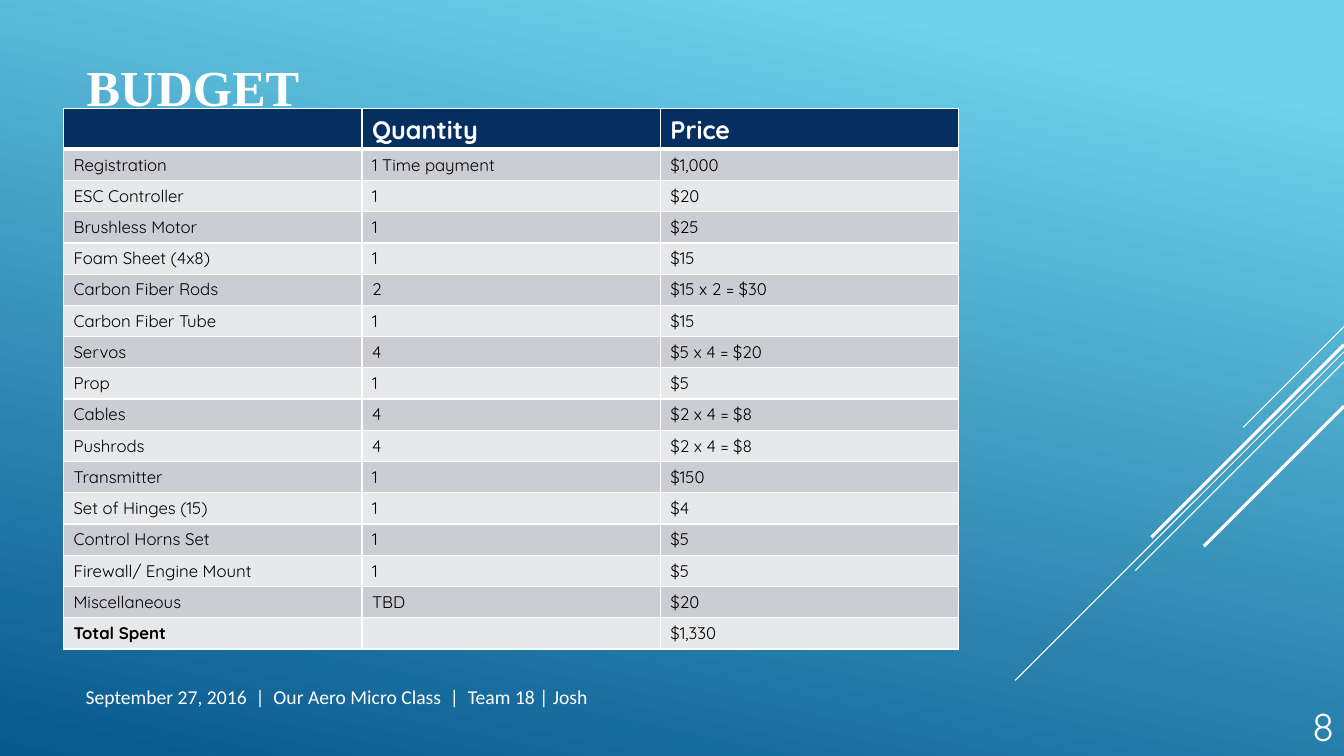
from lxml.etree import SubElement
from pptx import Presentation
from pptx.dml.color import RGBColor
from pptx.enum.shapes import MSO_CONNECTOR
from pptx.enum.text import MSO_ANCHOR, PP_ALIGN
from pptx.oxml.ns import qn
from pptx.util import Pt

PX = 9144
COLORS = {
    "sky": "6ED2EB",
    "ocean": "06588E",
    "white": "FFFFFF",
    "black": "000000",
    "header": "052F61",
    "band_dark": "CCCDD2",
    "band_light": "E7E8EA",
}


def add_run(paragraph, text, font, size, color, bold=False):
    run = paragraph.add_run()
    run.text = text
    run.font.name = font
    run.font.size = Pt(size)
    run.font.bold = bold
    run.font.color.rgb = RGBColor.from_string(COLORS[color])


def add_border(cell, side, width):
    line = SubElement(cell._tc.get_or_add_tcPr(), qn(f"a:ln{side}"), w=str(Pt(width)))
    fill = SubElement(line, qn("a:solidFill"))
    SubElement(fill, qn("a:srgbClr"), val=COLORS["white"])


presentation = Presentation()
presentation.slide_width = 1333 * PX
presentation.slide_height = 750 * PX
slide = presentation.slides.add_slide(presentation.slide_layouts[6])

background = slide.background.fill
background.gradient()
background.gradient_angle = 258
for stop, (position, color) in zip(background.gradient_stops, [(0.1, "sky"), (1, "ocean")]):
    stop.position = position
    stop.color.rgb = RGBColor.from_string(COLORS[color])

diagonals = [
    (324, 100, 0.75),
    (349, 326, 0.75),
    (359, 207, 0.75),
    (342, 191, 2.25),
    (403, 139, 2.25),
]
for top, run_length, width in diagonals:
    diagonal = slide.shapes.add_connector(
        MSO_CONNECTOR.STRAIGHT,
        1333 * PX, top * PX, (1333 - run_length) * PX, (top + run_length) * PX,
    )
    diagonal.line.color.rgb = RGBColor.from_string(COLORS["white"])
    diagonal.line.width = Pt(width)
    SubElement(diagonal._element.spPr, qn("a:effectLst"))

labels = [
    ("BUDGET", (76, 36, 841, 99), "Times New Roman", 36, True, MSO_ANCHOR.MIDDLE, PP_ALIGN.LEFT),
    ("September 27, 2016  |  Our Aero Micro Class  |  Team 18 | Josh",
     (75, 675, 825, 40), "Calibri", 14, False, MSO_ANCHOR.TOP, PP_ALIGN.LEFT),
    ("8", (1208, 675, 125, 73), "Quicksand", 28, False, MSO_ANCHOR.BOTTOM, PP_ALIGN.RIGHT),
]
for text, box, font, size, bold, anchor, alignment in labels:
    text_box = slide.shapes.add_textbox(*(length * PX for length in box))
    frame = text_box.text_frame
    frame.word_wrap = True
    frame.vertical_anchor = anchor
    paragraph = frame.paragraphs[0]
    paragraph.alignment = alignment
    add_run(paragraph, text, font, size, "white", bold)

budget = [
    ("", "Quantity", "Price"),
    ("Registration", "1 Time payment", "$1,000"),
    ("ESC Controller", "1", "$20"),
    ("Brushless Motor", "1", "$25"),
    ("Foam Sheet (4x8)", "1", "$15"),
    ("Carbon Fiber Rods", "2", "$15 x 2 = $30"),
    ("Carbon Fiber Tube", "1", "$15"),
    ("Servos", "4", "$5 x 4 = $20"),
    ("Prop", "1", "$5"),
    ("Cables", "4", "$2 x 4 = $8"),
    ("Pushrods", "4", "$2 x 4 = $8"),
    ("Transmitter", "1", "$150"),
    ("Set of Hinges (15)", "1", "$4"),
    ("Control Horns Set", "1", "$5"),
    ("Firewall/ Engine Mount", "1", "$5"),
    ("Miscellaneous", "TBD", "$20"),
    ("Total Spent", "", "$1,330"),
]
table = slide.shapes.add_table(
    len(budget), 3, 63 * PX, 108 * PX, 888 * PX, 533 * PX
).table
for column in table.columns:
    column.width = 296 * PX
for row_index, values in enumerate(budget):
    is_header = row_index == 0
    table.rows[row_index].height = (37 if is_header else 31) * PX
    if is_header:
        size, text_color, fill_color = 18, "white", "header"
    else:
        size, text_color = 12, "black"
        fill_color = "band_dark" if row_index % 2 else "band_light"
    for column_index, value in enumerate(values):
        cell = table.cell(row_index, column_index)
        add_border(cell, "L", 1)
        add_border(cell, "R", 1)
        add_border(cell, "T", 3 if row_index == 1 else 1)
        add_border(cell, "B", 3 if is_header else 1)
        cell.fill.solid()
        cell.fill.fore_color.rgb = RGBColor.from_string(COLORS[fill_color])
        paragraph = cell.text_frame.paragraphs[0]
        if value:
            bold = is_header or value == "Total Spent"
            add_run(paragraph, value, "Quicksand", size, text_color, bold)
        else:
            SubElement(paragraph._p, qn("a:endParaRPr"), sz=str(size * 100))

presentation.save("out.pptx")
